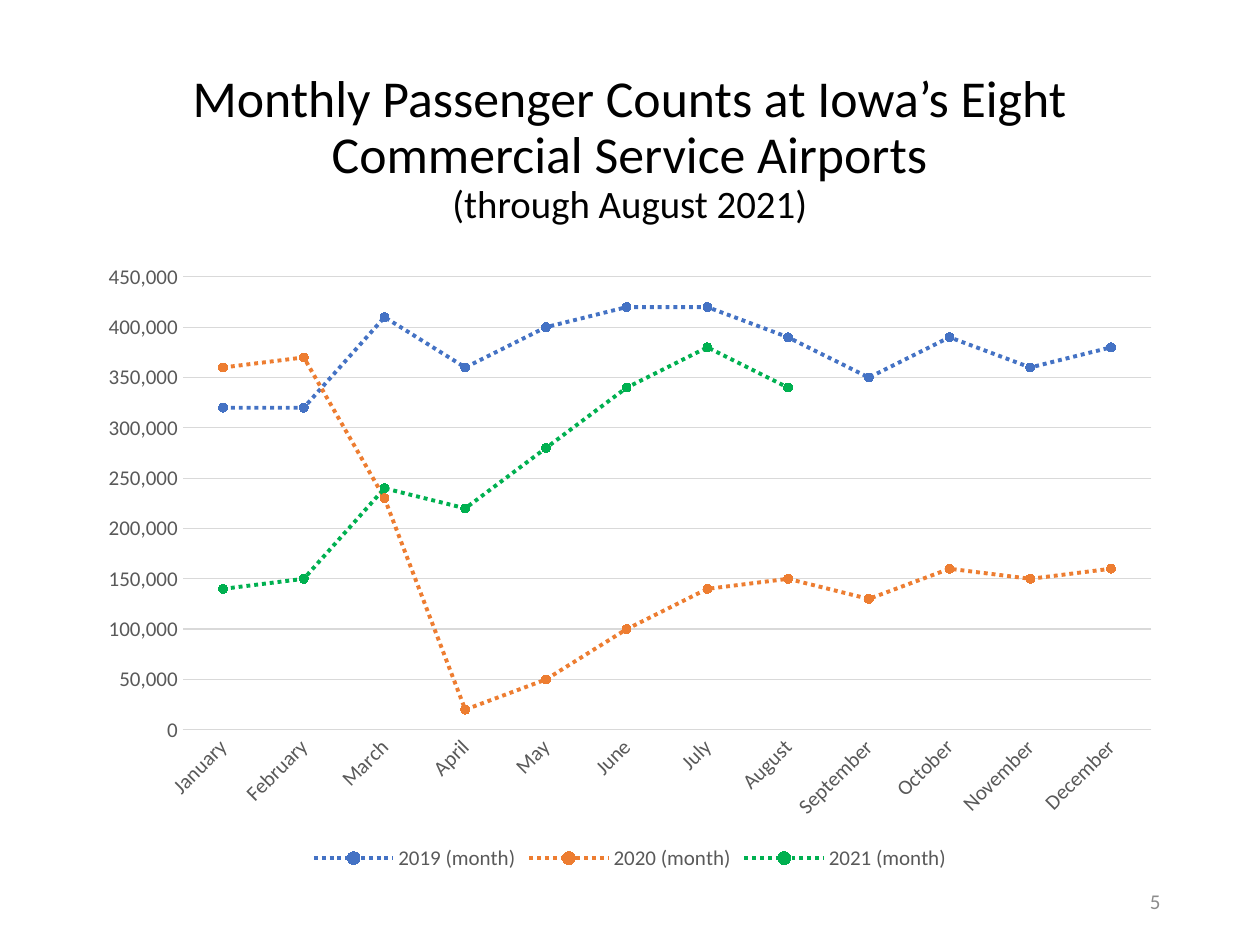
from pptx import Presentation
from pptx import util as u
from pptx.chart.data import CategoryChartData
from pptx.dml.color import RGBColor
from pptx.enum import chart as ch, dml, text

BLACK = RGBColor(0x00, 0x00, 0x00)
WHITE = RGBColor(0xFF, 0xFF, 0xFF)
LABEL = RGBColor(0x59, 0x59, 0x59)
GRID = RGBColor(0xD9, 0xD9, 0xD9)
NUMBER = RGBColor(0x8C, 0x8C, 0x8C)
BLUE = RGBColor(0x44, 0x72, 0xC4)
ORANGE = RGBColor(0xED, 0x7D, 0x31)
GREEN = RGBColor(0x00, 0xB0, 0x50)

WIDTH, HEIGHT = 10, 7.5
MARGIN = 0.69
CONTENT = WIDTH - 2 * MARGIN

MONTHS = ["January", "February", "March", "April", "May", "June", "July",
          "August", "September", "October", "November", "December"]
# Passengers in thousands, with the colour of each year
YEARS = {
    "2019 (month)": (BLUE, [320, 320, 410, 360, 400, 420, 420, 390, 350, 390, 360, 380]),
    "2020 (month)": (ORANGE, [360, 370, 230, 20, 50, 100, 140, 150, 130, 160, 150, 160]),
    "2021 (month)": (GREEN, [140, 150, 240, 220, 280, 340, 380, 340] + [None] * 4),
}


def apply(obj, **values):
    for name, value in values.items():
        setattr(obj, name, value)


def style_font(font, size, color):
    apply(font, name="Calibri", size=u.Pt(size), bold=False)
    font.color.rgb = color


def style_line(line, color, width):
    line.color.rgb = color
    line.width = u.Pt(width)


def box(left, top, width, height):
    return [u.Inches(v) for v in (left, top, width, height)]


def fill_text(sp, lines, align, anchor, spacing=None):
    tf = sp.text_frame
    apply(tf, word_wrap=True, auto_size=text.MSO_AUTO_SIZE.NONE,
          vertical_anchor=anchor)
    for i, (words, size, color) in enumerate(lines):
        p = tf.paragraphs[0] if i == 0 else tf.add_paragraph()
        apply(p, alignment=align, line_spacing=spacing,
              space_before=u.Pt(0))
        r = p.add_run()
        r.text = words
        style_font(r.font, size, color)


def add_title(s):
    sp = s.shapes.title
    sp.left, sp.top, sp.width, sp.height = box(MARGIN, 0.4, CONTENT, 1.45)
    fill_text(sp, [
        ("Monthly Passenger Counts at Iowa’s Eight Commercial Service Airports",
         29.6, BLACK),
        ("(through August 2021)", 22.2, BLACK),
    ], text.PP_ALIGN.CENTER, text.MSO_ANCHOR.BOTTOM, 0.9)


def add_page_number(s):
    width = 2.25
    sp = s.shapes.add_textbox(*box(WIDTH - MARGIN - width, 6.95, width, 0.4))
    fill_text(sp, [("5", 12, NUMBER)], text.PP_ALIGN.RIGHT,
              text.MSO_ANCHOR.MIDDLE)


def style_axes(chart):
    months, counts = chart.category_axis, chart.value_axis
    for axis in (months, counts):
        apply(axis, major_tick_mark=ch.XL_TICK_MARK.NONE,
              minor_tick_mark=ch.XL_TICK_MARK.NONE)
        style_font(axis.tick_labels.font, 12, LABEL)
    # Month names slant upwards by 45 degrees
    months._element.txPr.bodyPr.set("rot", "-2700000")
    style_line(months.format.line, GRID, 0.75)
    apply(counts, minimum_scale=0, maximum_scale=450000, major_unit=50000)
    apply(counts.tick_labels, number_format="#,##0",
          number_format_is_linked=False)
    counts.format.line.fill.background()
    style_line(counts.major_gridlines.format.line, GRID, 0.75)


def style_series(series, color):
    series.smooth = False
    style_line(series.format.line, color, 2.25)
    series.format.line.dash_style = dml.MSO_LINE.ROUND_DOT
    marker = series.marker
    apply(marker, style=ch.XL_MARKER_STYLE.CIRCLE, size=5)
    marker.format.fill.solid()
    marker.format.fill.fore_color.rgb = color
    style_line(marker.format.line, color, 0.75)


def add_passenger_chart(s):
    data = CategoryChartData(number_format="#,##0")
    data.categories = MONTHS
    for name, (_, thousands) in YEARS.items():
        data.add_series(name, [v and v * 1000 for v in thousands])
    chart = s.shapes.add_chart(ch.XL_CHART_TYPE.LINE_MARKERS,
                               *box(MARGIN, 2, CONTENT, 4.95), data).chart
    style_font(chart.font, 10, BLACK)
    apply(chart, has_title=False, has_legend=True)
    apply(chart.legend, position=ch.XL_LEGEND_POSITION.BOTTOM,
          include_in_layout=False)
    style_font(chart.legend.font, 12, LABEL)
    style_axes(chart)
    plot = chart.plots[0]
    plot.vary_by_categories = False
    for series, (color, _) in zip(plot.series, YEARS.values()):
        style_series(series, color)


def main():
    prs = Presentation()
    apply(prs, slide_width=u.Inches(WIDTH), slide_height=u.Inches(HEIGHT))
    s = prs.slides.add_slide(prs.slide_layouts[5])
    s.background.fill.solid()
    s.background.fill.fore_color.rgb = WHITE
    add_title(s)
    add_passenger_chart(s)
    add_page_number(s)
    prs.save("out.pptx")


if __name__ == "__main__":
    main()
